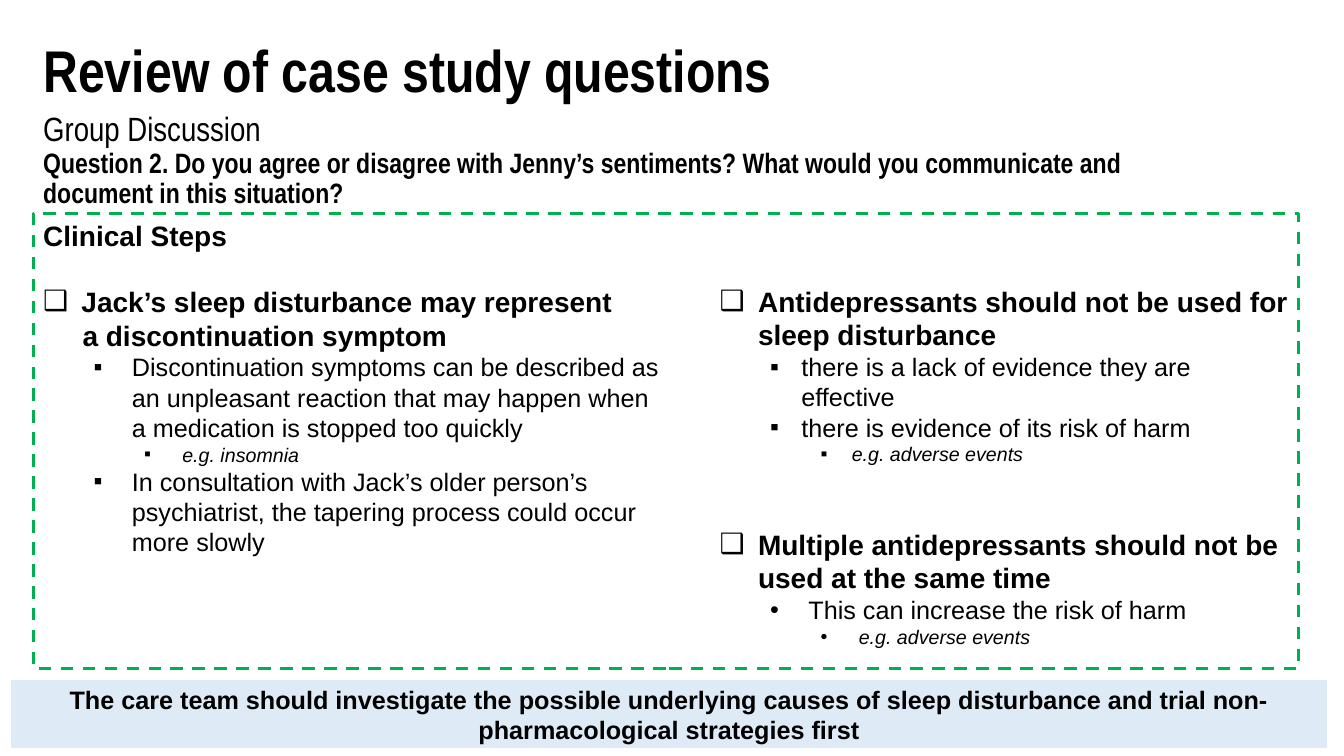
from dataclasses import dataclass

from lxml import etree
from pptx import Presentation
from pptx import util as u
from pptx.dml.color import RGBColor
from pptx.enum import dml, shapes, text
from pptx.oxml.ns import qn


@dataclass(frozen=True)
class Theme:
    ink: RGBColor = RGBColor(0x00, 0x00, 0x00)
    white: RGBColor = RGBColor(0xFF, 0xFF, 0xFF)
    green: RGBColor = RGBColor(0x00, 0xB0, 0x50)
    pale_blue: RGBColor = RGBColor(0xDE, 0xEB, 0xF7)
    heading_font: str = "Arial Narrow"
    body_font: str = "Arial"
    title: int = 42
    subtitle: int = 24
    point: int = 20
    detail: int = 18
    example: int = 14
    line: float = 2.25


THEME = Theme()
POINT = {"size": THEME.point, "bold": True}
DETAIL = {"size": THEME.detail, "bold": False}
EXAMPLE = {"size": THEME.example, "bold": False, "italic": True}

# Each entry: wording, format, level, text indent, hanging indent, bullet, space before
LEFT_STEPS = [
    ("Clinical Steps", POINT, 0, 0, 0, None, 0),
    ("Jack’s sleep disturbance may represent", POINT, 0, 0.38, 0.38, "❑", 23),
    ("a discontinuation symptom", POINT, 0, 0.39, 0, None, 0),
    ("Discontinuation symptoms can be described as an unpleasant reaction that "
     "may happen when a medication is stopped too quickly",
     DETAIL, 1, 0.88, 0.38, "▪", 0),
    ("e.g. insomnia", EXAMPLE, 2, 1.38, 0.38, "▪", 0),
    ("In consultation with Jack’s older person’s psychiatrist, the tapering "
     "process could occur more slowly", DETAIL, 1, 0.88, 0.38, "▪", 0),
]
RIGHT_STEPS = [
    ("Antidepressants should not be used for sleep disturbance",
     POINT, 0, 0.38, 0.38, "❑", 0),
    ("there is a lack of evidence they are effective",
     DETAIL, 1, 0.81, 0.31, "▪", 0),
    ("there is evidence of its risk of harm", DETAIL, 1, 0.81, 0.31, "▪", 0),
    ("e.g. adverse events", EXAMPLE, 2, 1.31, 0.31, "▪", 0),
    ("Multiple antidepressants should not be used at the same time",
     POINT, 0, 0.38, 0.38, "❑", 44),
    ("This can increase the risk of harm", DETAIL, 1, 0.88, 0.38, "•", 0),
    ("e.g. adverse events", EXAMPLE, 2, 1.38, 0.38, "•", 0),
]


def inches(*lengths):
    return [u.Inches(length) for length in lengths]


def write(para, wording, size, font=THEME.body_font, bold=False, italic=False):
    span = para.add_run()
    span.text = wording
    values = {"name": font, "size": u.Pt(size), "bold": bold, "italic": italic}
    for name, value in values.items():
        setattr(span.font, name, value)
    span.font.color.rgb = THEME.ink


def prepare(box, anchor=text.MSO_ANCHOR.TOP):
    frame = box.text_frame
    values = {"word_wrap": True, "auto_size": text.MSO_AUTO_SIZE.NONE,
              "vertical_anchor": anchor}
    for name, value in values.items():
        setattr(frame, name, value)
    return frame


def add_heading(box, wording, size, bold):
    para = prepare(box).paragraphs[0]
    para.alignment = text.PP_ALIGN.LEFT
    para.line_spacing = 0.9
    para.space_before = u.Pt(0)
    write(para, wording, size, THEME.heading_font, bold)


def add_header(page, left, top):
    # Title
    title = page.shapes.title
    title.left, title.top, title.width, title.height = inches(left, top, 8.15, 0.81)
    add_heading(title, "Review of case study questions", THEME.title, True)

    # Subtitle and question
    lines = [
        ("Group Discussion", 0.71, 8.15, 0.51, THEME.subtitle, False),
        ("Question 2. Do you agree or disagree with Jenny’s sentiments? What would "
         "you communicate and document in this situation?",
         1.07, 11.82, 0.44, THEME.point, True),
    ]
    for wording, offset, width, height, size, bold in lines:
        box = page.shapes.add_textbox(*inches(left, top + offset, width, height))
        add_heading(box, wording, size, bold)


def add_steps(box, steps):
    frame = prepare(box)
    for index, (wording, style, level, indent, hang, bullet, gap) in enumerate(steps):
        para = frame.add_paragraph() if index else frame.paragraphs[0]
        para.level = level
        para.alignment = text.PP_ALIGN.LEFT
        para.space_before = u.Pt(gap)
        props = para._p.get_or_add_pPr()
        props.set("marL", str(u.Inches(indent)))
        props.set("indent", str(-u.Inches(hang)))
        if bullet:
            etree.SubElement(props, qn("a:buFont")).set("typeface", THEME.body_font)
            etree.SubElement(props, qn("a:buChar")).set("char", bullet)
        else:
            etree.SubElement(props, qn("a:buNone"))
        write(para, wording, **style)


def add_panel(page, left, top, width, height):
    # Dashed frame holding the left column
    panel = page.shapes.add_shape(shapes.MSO_SHAPE.RECTANGLE,
                                  *inches(left, top, width, height))
    panel.shadow.inherit = False
    panel.fill.background()
    panel.line.color.rgb = THEME.green
    panel.line.width = u.Pt(THEME.line)
    panel.line.dash_style = dml.MSO_LINE.DASH
    panel.text_frame.margin_right = u.Inches(width / 2)
    add_steps(panel, LEFT_STEPS)

    # Right column
    column_left = left + 6.71
    column = page.shapes.add_textbox(
        *inches(column_left, top + 0.65, left + width - column_left, 4.07))
    add_steps(column, RIGHT_STEPS)


def add_conclusion(page, left, top, width, height):
    banner = page.shapes.add_shape(shapes.MSO_SHAPE.RECTANGLE,
                                   *inches(left, top, width, height))
    banner.shadow.inherit = False
    banner.fill.solid()
    banner.fill.fore_color.rgb = THEME.pale_blue
    banner.line.color.rgb = THEME.white
    banner.line.width = u.Pt(THEME.line)
    para = prepare(banner, text.MSO_ANCHOR.MIDDLE).paragraphs[0]
    para.alignment = text.PP_ALIGN.CENTER
    write(para, "The care team should investigate the possible underlying causes of "
          "sleep disturbance and trial non-pharmacological strategies first",
          THEME.detail, bold=True)


def main():
    deck = Presentation()
    deck.slide_width, deck.slide_height = inches(13.33, 7.5)
    page = deck.slides.add_slide(deck.slide_layouts.get_by_name("Title Only"))
    page.background.fill.solid()
    page.background.fill.fore_color.rgb = THEME.white
    add_header(page, 0.33, 0.36)
    add_panel(page, 0.33, 2.12, 12.55, 4.51)
    add_conclusion(page, 0.09, 6.73, 13.09, 0.71)
    deck.save("out.pptx")


if __name__ == "__main__":
    main()
